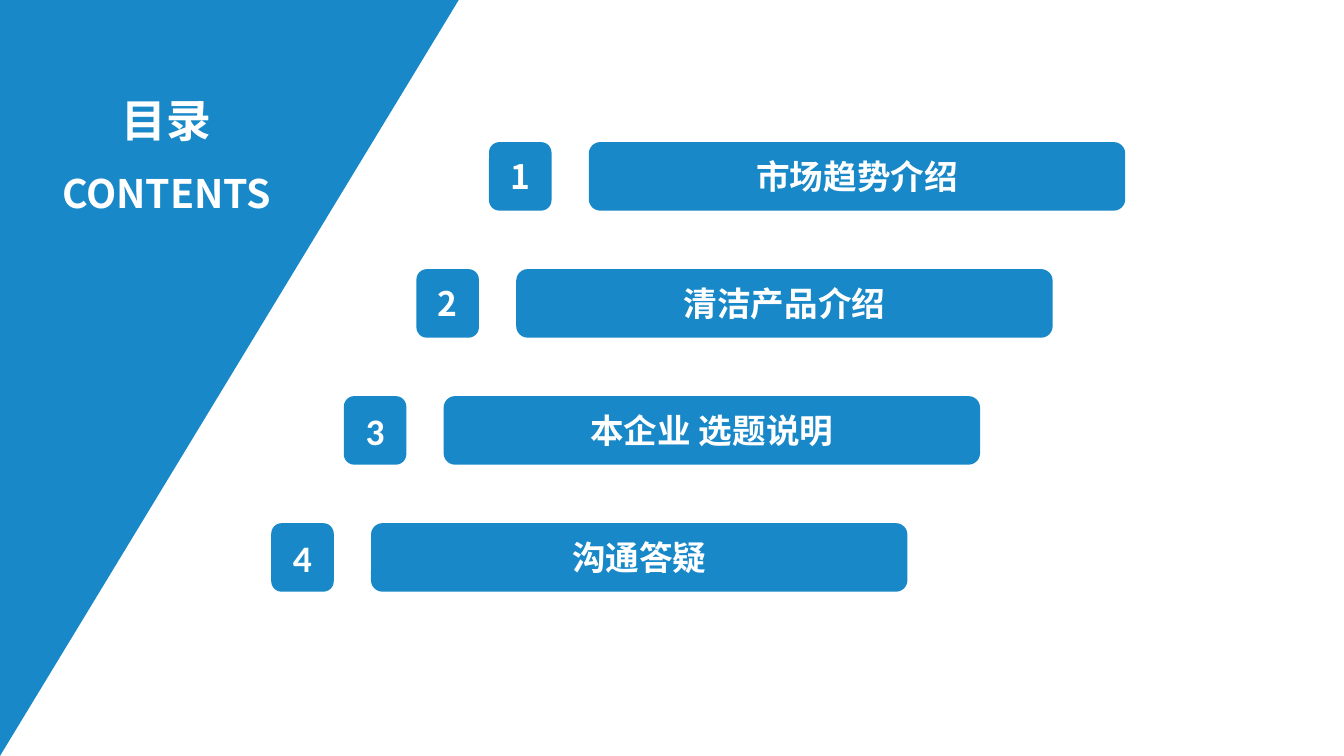
from pptx import Presentation
from pptx.dml.color import RGBColor
from pptx.enum.shapes import MSO_SHAPE
from pptx.enum.text import MSO_ANCHOR, MSO_AUTO_SIZE, PP_ALIGN
from pptx.oxml.ns import qn
from pptx.util import Inches, Pt

ROUNDED = MSO_SHAPE.ROUNDED_RECTANGLE
TRIANGLE = MSO_SHAPE.RIGHT_TRIANGLE
CENTER = PP_ALIGN.CENTER
TOP, MIDDLE = MSO_ANCHOR.TOP, MSO_ANCHOR.MIDDLE
FIT_SHAPE = MSO_AUTO_SIZE.SHAPE_TO_FIT_TEXT
COLORS = {"blue": "1888C8", "white": "FFFFFF"}
CJK_FONT = "Noto Sans CJK SC"
LATIN_FONT = "Calibri"


def add_blue_shape(shapes, kind, left, top, width, height):
    shape = shapes.add_shape(kind, Inches(left), Inches(top), Inches(width), Inches(height))
    shape.shadow.inherit = False
    shape.fill.solid()
    shape.fill.fore_color.rgb = RGBColor.from_string(COLORS["blue"])
    shape.line.fill.background()
    return shape


def add_white_run(paragraph, text, size, font_name=CJK_FONT):
    """Add a bold, centred run that also names its East Asian font."""
    paragraph.alignment = CENTER
    run = paragraph.add_run()
    run.text = text
    run.font.size = Pt(size)
    run.font.bold = True
    run.font.name = font_name
    run.font.color.rgb = RGBColor.from_string(COLORS["white"])
    east_asian = run.font._element.makeelement(qn("a:ea"), {"typeface": CJK_FONT})
    run.font._element.find(qn("a:latin")).addnext(east_asian)


presentation = Presentation()
presentation.slide_width = Inches(13.33)
presentation.slide_height = Inches(7.5)
slide = presentation.slides.add_slide(presentation.slide_layouts[5])

# Corner triangle, flipped so its right angle sits at the top left
corner = add_blue_shape(slide.shapes, TRIANGLE, 0, 0, 4.55, 7.5)
corner._element.spPr.xfrm.set("flipV", "1")

# Agenda rows step down and to the left, parallel to the triangle's edge
agenda = [
    ("市场趋势介绍", 24, CJK_FONT),
    ("清洁产品介绍", 24, CJK_FONT),
    ("本企业 选题说明", 26.7, LATIN_FONT),
    ("沟通答疑", 26.7, LATIN_FONT),
]
for index, (topic, number_size, number_font) in enumerate(agenda):
    left = 4.85 - 0.72 * index
    top = 1.41 + 1.26 * index
    row = slide.shapes.add_group_shape()
    number_box = add_blue_shape(row.shapes, ROUNDED, left, top, 0.62, 0.68)
    topic_box = add_blue_shape(row.shapes, ROUNDED, left + 0.99, top, 5.32, 0.68)
    for box in (number_box, topic_box):
        box.text_frame.vertical_anchor = MIDDLE
    add_white_run(number_box.text_frame.paragraphs[0], str(index + 1), number_size, number_font)
    add_white_run(topic_box.text_frame.paragraphs[0], topic, 24)

# Title, brought in front of the triangle
title = slide.shapes.title
title.left, title.top = Inches(0.25), Inches(0.58)
title.width, title.height = Inches(2.81), Inches(1.65)
slide.shapes._spTree.append(title._element)
frame = title.text_frame
frame.word_wrap = True
frame.auto_size = FIT_SHAPE
frame.vertical_anchor = TOP
frame.margin_left = frame.margin_right = Inches(0.13)
frame.margin_top = frame.margin_bottom = Inches(0.07)
for paragraph, text, size in (
    (frame.paragraphs[0], "目录", 32),
    (frame.add_paragraph(), "CONTENTS", 28),
):
    paragraph.line_spacing = 1.5
    add_white_run(paragraph, text, size)

presentation.save("out.pptx")
